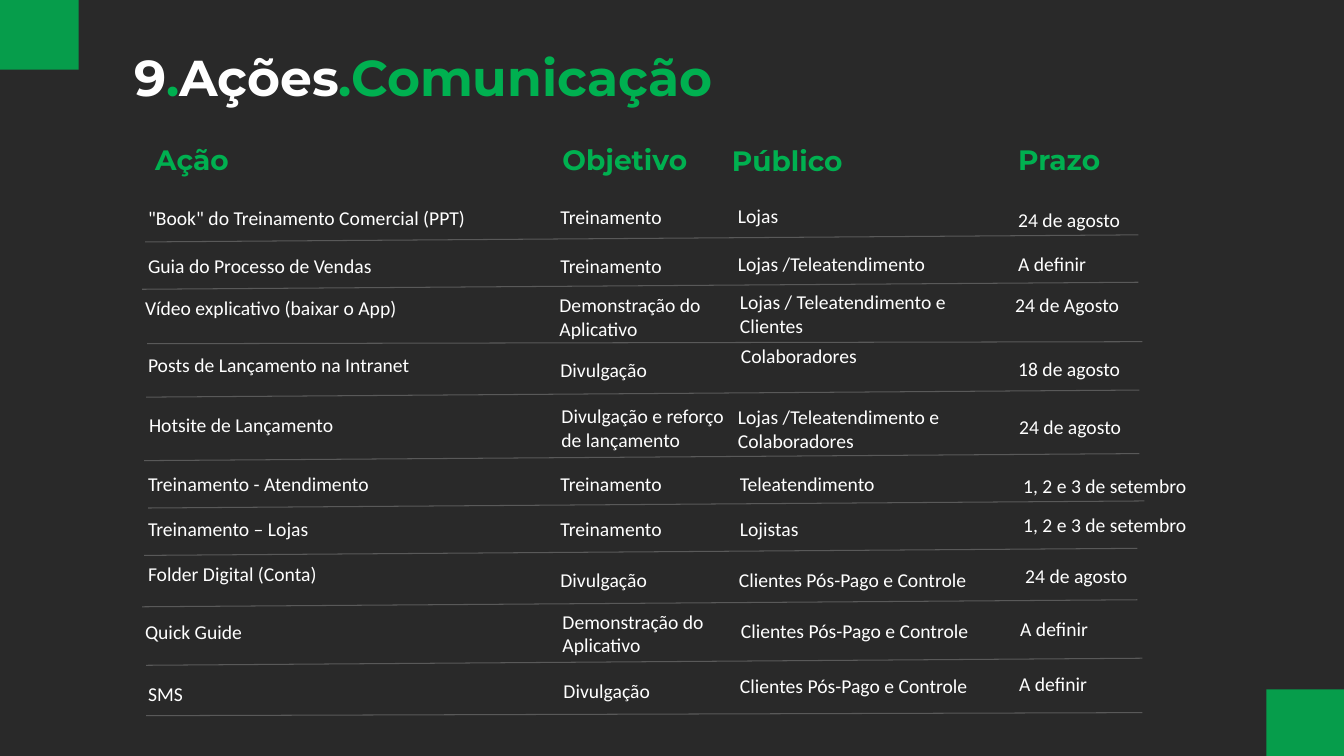
import pptx
import pptx.dml.color
import pptx.enum.shapes
import pptx.enum.text
import pptx.oxml
import pptx.oxml.ns
import pptx.util
from pptx.util import Inches

GREEN, WHITE, DARK, CORNER, RULE = "00B050", "FFFFFF", "292929", "069D4B", "595959"
TITLE_FONT = {"name": "Montserrat", "size": pptx.util.Pt(36), "bold": True}
HEADING_FONT = {"name": "Montserrat", "size": pptx.util.Pt(20), "bold": True}
CELL_FONT = {"name": "Calibri", "size": pptx.util.Pt(14), "bold": False}

TITLE = [("9", WHITE), (".", GREEN), ("Ações", WHITE), (".Comunicação", GREEN)]

# text, left, top, width
HEADINGS = [
    ("Ação", 1.44, 1.31, 1.41),
    ("Objetivo", 5.48, 1.31, 1.59),
    ("Público", 7.16, 1.32, 1.94),
    ("Prazo", 10, 1.31, 2.23),
]

# one row per action; each cell is text, left, top
COLUMN_WIDTHS = [3.5, 1.89, 2.63, 1.92]
ACTIONS = [
    [('"Book" do Treinamento Comercial (PPT)', 1.37, 1.94), ("Treinamento", 5.46, 1.93),
     ("Lojas", 7.22, 1.92), ("24 de agosto", 10, 1.96)],
    [("Guia do Processo de Vendas", 1.37, 2.42), ("Treinamento", 5.46, 2.42),
     ("Lojas /Teleatendimento", 7.22, 2.4), ("A definir", 10, 2.4)],
    [("Vídeo explicativo (baixar o App)", 1.34, 2.84), ("Demonstração do Aplicativo", 5.45, 2.81),
     ("Lojas / Teleatendimento e Clientes", 7.24, 2.78), ("24 de Agosto", 9.97, 2.81)],
    [("Posts de Lançamento na Intranet", 1.37, 3.4), ("Divulgação", 5.46, 3.45),
     ("Colaboradores", 7.25, 3.31), ("18 de agosto", 10, 3.44)],
    [("Hotsite de Lançamento", 1.38, 4), ("Divulgação e reforço de lançamento", 5.47, 3.91),
     ("Lojas /Teleatendimento e Colaboradores", 7.22, 3.92), ("24 de agosto", 10.01, 4.02)],
    [("Treinamento - Atendimento", 1.37, 4.58), ("Treinamento", 5.46, 4.58),
     ("Teleatendimento", 7.24, 4.58), ("1, 2 e 3 de setembro", 10.05, 4.6)],
    [("Treinamento – Lojas", 1.37, 5.03), ("Treinamento", 5.46, 5.03),
     ("Lojistas", 7.24, 5.03), ("1, 2 e 3 de setembro", 10.05, 4.99)],
    [("Folder Digital (Conta)", 1.37, 5.47), ("Divulgação", 5.46, 5.53),
     ("Clientes Pós-Pago e Controle", 7.23, 5.53), ("24 de agosto", 10.07, 5.49)],
    [("Quick Guide", 1.34, 6.05), ("Demonstração do Aplicativo", 5.48, 5.95),
     ("Clientes Pós-Pago e Controle", 7.25, 6.04), ("A definir", 10.02, 6.02)],
    [("SMS", 1.37, 6.67), ("Divulgação", 5.49, 6.64),
     ("Clientes Pós-Pago e Controle", 7.24, 6.59), ("A definir", 10.01, 6.57)],
]

# left, left height, right, right height of the line under each action
RULES = [
    (1.44, 2.4, 11.29, 2.33), (1.41, 2.87, 11.29, 2.8),
    (1.46, 3.41, 11.33, 3.39), (1.45, 3.94, 11.3, 3.87),
    (1.43, 4.57, 11.3, 4.5), (1.47, 5.04, 11.35, 4.97),
    (1.43, 5.51, 11.28, 5.44), (1.41, 6.02, 11.28, 5.95),
    (1.45, 6.6, 11.33, 6.53), (1.45, 7.1, 11.33, 7.07),
]


def set_colour(target, colour):
    """Colour a fill, or a colour format of a font or line."""
    if hasattr(target, "solid"):
        target.solid()
        target = target.fore_color
    target.rgb = pptx.dml.color.RGBColor.from_string(colour)


def set_values(target, values):
    for name, value in values.items():
        setattr(target, name, value)


def add_span(para, text, font, colour):
    span = para.add_run()
    span.text = text
    set_values(span.font, font)
    set_colour(span.font.color, colour)


def set_frame(frame, side, end):
    set_values(frame, {
        "word_wrap": True,
        "auto_size": pptx.enum.text.MSO_AUTO_SIZE.NONE,
        "vertical_anchor": pptx.enum.text.MSO_ANCHOR.TOP,
        "margin_left": Inches(side), "margin_right": Inches(side),
        "margin_top": Inches(end), "margin_bottom": Inches(end),
    })


def add_title(page):
    title = page.shapes.title
    set_values(title, {"left": Inches(1.23), "top": Inches(0.41),
                       "width": Inches(7.15), "height": Inches(0.71)})
    set_frame(title.text_frame, 0.1, 0.05)
    para = title.text_frame.paragraphs[0]
    set_values(para, {"alignment": pptx.enum.text.PP_ALIGN.LEFT, "line_spacing": 1.0,
                      "space_before": pptx.util.Pt(0)})
    for text, colour in TITLE:
        add_span(para, text, TITLE_FONT, colour)


def add_label(page, text, left, top, width, height, font, colour):
    box = page.shapes.add_textbox(Inches(left), Inches(top), Inches(width), Inches(height))
    set_frame(box.text_frame, 0.1, 0.1)
    add_span(box.text_frame.paragraphs[0], text, font, colour)


def add_corner(page, left, top):
    corner = page.shapes.add_shape(pptx.enum.shapes.MSO_SHAPE.RECTANGLE,
                                   Inches(left), Inches(top), Inches(0.78), Inches(0.69))
    corner.shadow.inherit = False
    set_colour(corner.fill, CORNER)
    corner.line.fill.background()


def add_rule(page, ends):
    rule = page.shapes.add_connector(pptx.enum.shapes.MSO_CONNECTOR.STRAIGHT,
                                     *[Inches(value) for value in ends])
    rule.line.width = pptx.util.Pt(0.75)
    set_colour(rule.line.fill, RULE)
    effects = pptx.oxml.parse_xml(f"<a:effectLst {pptx.oxml.ns.nsdecls('a')}/>")
    rule._element.spPr.append(effects)


def main():
    deck = pptx.Presentation()
    deck.slide_width, deck.slide_height = Inches(13.33), Inches(7.5)
    page = deck.slides.add_slide(deck.slide_layouts[5])
    set_colour(page.background.fill, DARK)
    add_corner(page, 0, 0)
    add_corner(page, 12.56, 6.84)
    add_title(page)
    for text, left, top, width in HEADINGS:
        add_label(page, text, left, top, width, 0.59, HEADING_FONT, GREEN)
    for action, ends in zip(ACTIONS, RULES):
        for (text, left, top), width in zip(action, COLUMN_WIDTHS):
            add_label(page, text, left, top, width, 0.37, CELL_FONT, WHITE)
        add_rule(page, ends)
    deck.save("out.pptx")


if __name__ == "__main__":
    main()
